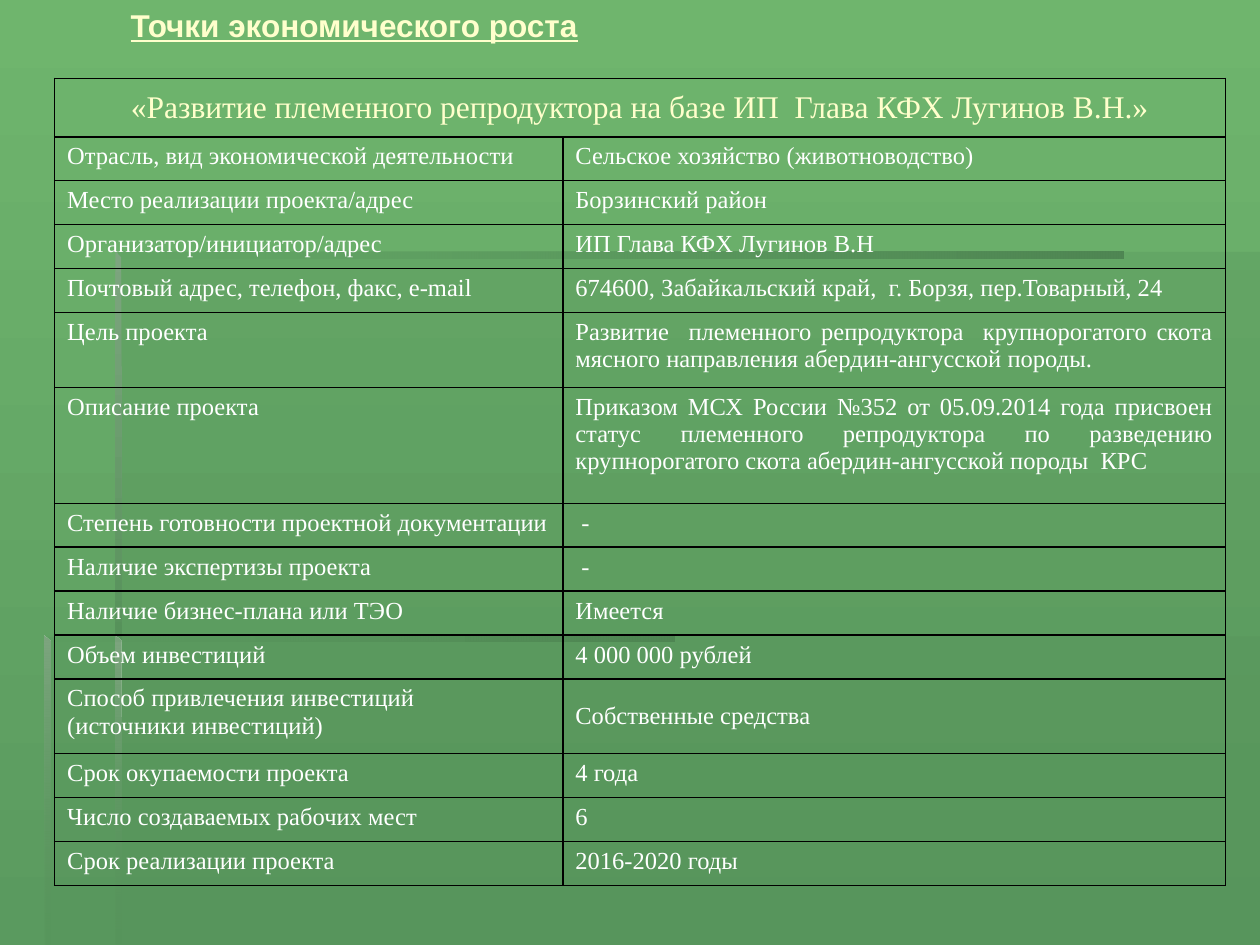
from dataclasses import dataclass

from lxml import etree
from pptx import Presentation
from pptx.dml.color import RGBColor
from pptx.enum import text
from pptx.oxml import ns
from pptx.util import Pt


@dataclass(frozen=True)
class Theme:
    top: str = "6FB56D"
    base: str = "5A9A5F"
    shade: str = "56925A"
    dark: str = "4F8653"
    pale: str = "7DA57F"
    cream: str = "FFFFCC"
    white: str = "FFFFFF"
    black: str = "000000"
    head: int = 18
    body: int = 14
    sans: str = "Arial"
    serif: str = "Times New Roman"


class Deck:
    def __init__(self, theme):
        self.theme = theme
        self.prs = Presentation()
        self.prs.slide_width, self.prs.slide_height = Pt(720), Pt(540)
        self.slide = self.prs.slides.add_slide(self.prs.slide_layouts[5])
        self.paint(self.slide.background.fill, [theme.top, theme.base], 270)

    def paint(self, fill, tones, angle):
        if len(tones) == 1:
            fill.solid()
            fill.fore_color.rgb = RGBColor.from_string(tones[0])
            return
        fill.gradient()
        fill.gradient_angle = angle
        for stop, tone in zip(fill.gradient_stops, tones):
            stop.color.rgb = RGBColor.from_string(tone)

    def style(self, par, size, face, tone, align):
        par.alignment = align
        font = par.font
        font.size, font.name = Pt(size), face
        font.color.rgb = RGBColor.from_string(tone)
        return font

    def title(self, words, left, top, width, height):
        box = self.slide.shapes.title
        box.left, box.top, box.width, box.height = map(Pt, (left, top, width, height))
        frame = box.text_frame
        frame.text = words
        frame.word_wrap = False
        frame.vertical_anchor = text.MSO_ANCHOR.TOP
        font = self.style(frame.paragraphs[0], self.theme.head, self.theme.sans,
                          self.theme.cream, text.PP_ALIGN.LEFT)
        font.bold = font.underline = True

    def panel(self, points, tones, alphas, angle=0):
        spots = [(Pt(x), Pt(y)) for x, y in points]
        path = self.slide.shapes.build_freeform(*spots[0])
        path.add_line_segments(spots[1:], close=True)
        shape = path.convert_to_shape()
        shape.shadow.inherit = False
        shape.line.fill.background()
        self.paint(shape.fill, tones, angle)
        colors = shape.element.spPr.iter(ns.qn("a:srgbClr"))
        for color, alpha in zip(colors, alphas):
            if alpha < 100:
                etree.SubElement(color, ns.qn("a:alpha"), val=str(alpha * 1000))

    def cell(self, cell, words, size, tone, align, middle=False):
        cell.text = words
        cell.vertical_anchor = text.MSO_ANCHOR.MIDDLE if middle else text.MSO_ANCHOR.TOP
        for par in cell.text_frame.paragraphs:
            self.style(par, size, self.theme.serif, tone, align)

    def frame(self, cell):
        props = cell._tc.get_or_add_tcPr()
        for side in ("lnL", "lnR", "lnT", "lnB"):
            line = etree.SubElement(props, ns.qn(f"a:{side}"), w=str(Pt(1)))
            fill = etree.SubElement(line, ns.qn("a:solidFill"))
            etree.SubElement(fill, ns.qn("a:srgbClr"), val=self.theme.black)
        cell.fill.background()

    def table(self, head, rows, left, top, widths, heights):
        grid = self.slide.shapes.add_table(
            len(heights), len(widths), Pt(left), Pt(top),
            Pt(sum(widths)), Pt(sum(heights))).table
        grid.first_row = grid.horz_banding = False
        for col, width in zip(grid.columns, widths):
            col.width = Pt(width)
        for row, height in zip(grid.rows, heights):
            row.height = Pt(height)
        for cell in grid.iter_cells():
            self.frame(cell)
        grid.cell(0, 0).merge(grid.cell(0, 1))
        theme, align = self.theme, text.PP_ALIGN
        self.cell(grid.cell(0, 0), head, theme.head, theme.cream, align.CENTER, True)
        for i, (name, value) in enumerate(rows, 1):
            self.cell(grid.cell(i, 0), name, theme.body, theme.white, align.LEFT)
            self.cell(grid.cell(i, 1), value, theme.body, theme.white,
                      align.JUSTIFY, "\n" in name)


HEAD = "«Развитие племенного репродуктора на базе ИП  Глава КФХ Лугинов В.Н.»"
ROWS = [
    ("Отрасль, вид экономической деятельности", "Сельское хозяйство (животноводство)"),
    ("Место реализации проекта/адрес", "Борзинский район"),
    ("Организатор/инициатор/адрес", "ИП Глава КФХ Лугинов В.Н"),
    ("Почтовый адрес, телефон, факс, e-mail",
     "674600, Забайкальский край,  г. Борзя, пер.Товарный, 24"),
    ("Цель проекта", "Развитие  племенного репродуктора  крупнорогатого скота "
     "мясного направления абердин-ангусской породы."),
    ("Описание проекта", "Приказом МСХ России №352 от 05.09.2014 года присвоен "
     "статус племенного репродуктора по разведению крупнорогатого скота "
     "абердин-ангусской породы  КРС"),
    ("Степень готовности проектной документации", " -"),
    ("Наличие экспертизы проекта", " -"),
    ("Наличие бизнес-плана или ТЭО", "Имеется"),
    ("Объем инвестиций", "4 000 000 рублей"),
    ("Способ привлечения инвестиций\n(источники инвестиций)", "Собственные средства"),
    ("Срок окупаемости проекта", "4 года"),
    ("Число создаваемых рабочих мест", "6"),
    ("Срок реализации проекта", "2016-2020 годы"),
]


def block(left, top, right, low):
    return [(left, top), (left, low), (right, low), (right, top)]


def main():
    theme = Theme()
    deck = Deck(theme)
    veil, glow, fade = [theme.shade], [theme.shade, theme.dark], [theme.pale, theme.shade]
    deck.panel(block(66, 363.6, 720, 540), veil, [30])
    deck.panel([(67.5, 364), (26, 364), (26, 540), (720, 540), (720, 144), (67.5, 144)],
               veil, [30])
    deck.panel(block(66, 143.7, 642, 147.6), glow, [0, 100])
    deck.panel([(66, 143.7), (66, 367), (69.6, 367), (69.2, 147)], fade, [100, 100], 270)
    deck.panel([(65.8, 540), (69.6, 540), (69.2, 366), (65.8, 363)], fade, [100, 0], 270)
    deck.panel(block(25.2, 363, 385.2, 366.6), glow, [0, 100])
    deck.panel([(25.2, 363), (25.2, 540), (28.8, 540), (28.8, 366.6)], fade, [100, 10], 270)
    tall = {0: 33.4, 5: 42.8, 6: 66.3, 11: 42.8}
    heights = [tall.get(i, 25.1) for i in range(len(ROWS) + 1)]
    deck.table(HEAD, ROWS, 31.2, 44.8, (290.4, 378.6), heights)
    deck.title("Точки экономического роста", 67.4, 0, 273.6, 29)
    deck.prs.save("out.pptx")


if __name__ == "__main__":
    main()
